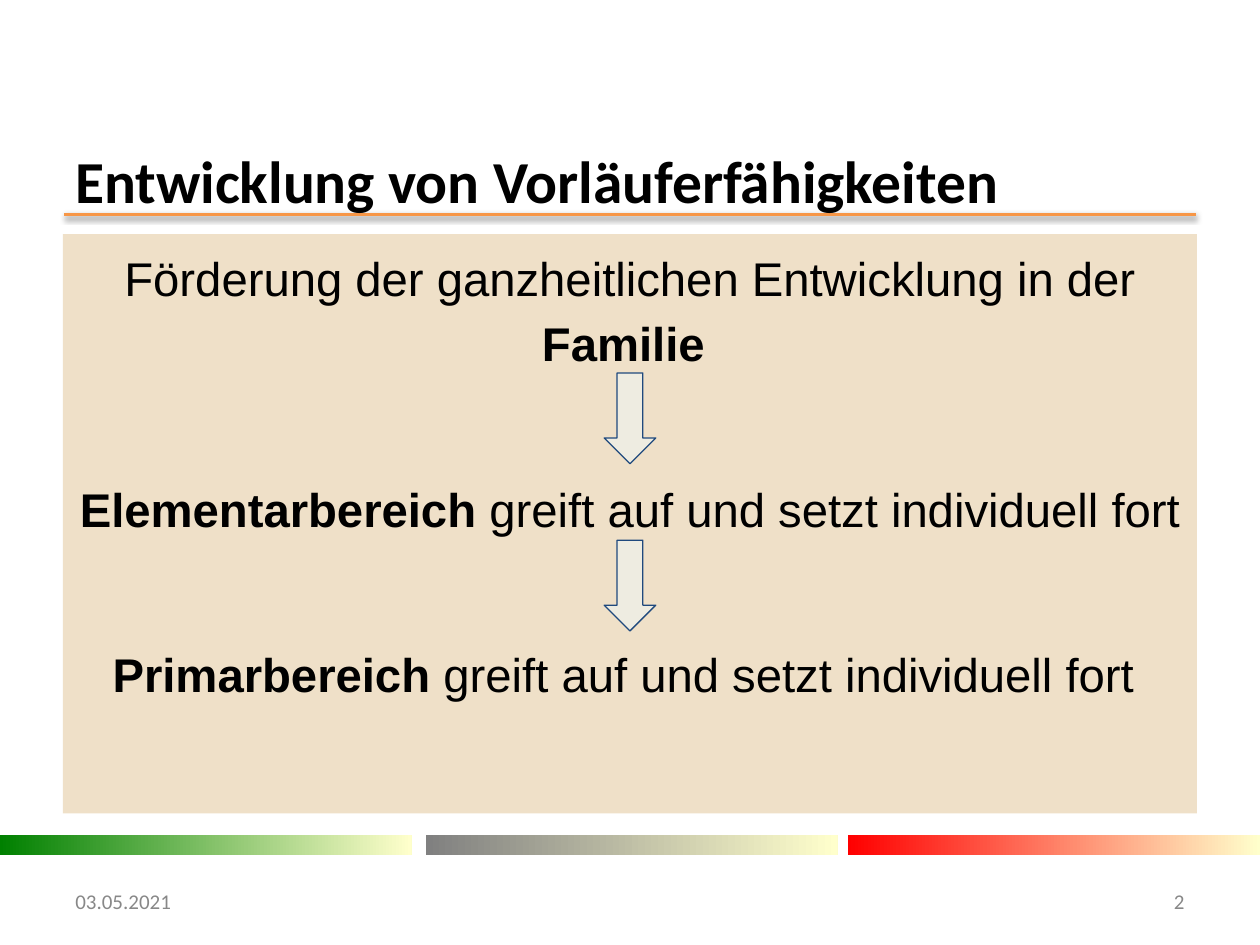
from lxml import etree
from pptx import Presentation
from pptx.dml.color import RGBColor
from pptx.enum import shapes, text
from pptx.oxml import parse_xml
from pptx.oxml.ns import nsdecls, qn
from pptx.util import Cm, Pt

BLACK = RGBColor(0x00, 0x00, 0x00)
GREY_TEXT = RGBColor(0x88, 0x88, 0x88)
ORANGE = RGBColor(0xF7, 0x96, 0x46)
SAND = RGBColor(0xEF, 0xE0, 0xC8)
IVORY = RGBColor(0xEE, 0xEC, 0xE1)
NAVY = RGBColor(0x1F, 0x49, 0x7D)
GREEN = RGBColor(0x00, 0x80, 0x00)
GREY = RGBColor(0x80, 0x80, 0x80)
RED = RGBColor(0xFF, 0x00, 0x00)
CREAM = RGBColor(0xFF, 0xFF, 0xCC)

STAGES = [
    [("Förderung der ganzheitlichen Entwicklung in der ", False), ("Familie ", True)],
    [("Elementarbereich", True), (" greift auf und setzt individuell fort", False)],
    [("Primarbereich", True), (" greift auf und setzt individuell fort ", False)],
]


def set_font(font, name, size, color):
    """Give a font its name, size and colour."""
    font.name, font.size = name, Pt(size)
    font.color.rgb = color


def add_shape(slide, kind, x, y, w, h):
    """Add a preset shape without shadow or outline."""
    sp = slide.shapes.add_shape(kind, Cm(x), Cm(y), Cm(w), Cm(h))
    sp.shadow.inherit = False
    sp.line.fill.background()
    return sp


def add_label(slide, x, y, w, h, label, size, color, bold=False, align=text.PP_ALIGN.LEFT):
    """Add one line of Calibri text, centred vertically in its box."""
    tf = slide.shapes.add_textbox(Cm(x), Cm(y), Cm(w), Cm(h)).text_frame
    tf.word_wrap = True
    tf.vertical_anchor = text.MSO_ANCHOR.MIDDLE
    p = tf.paragraphs[0]
    p.text, p.alignment = label, align
    set_font(p.font, "Calibri", size, color)
    p.font.bold = bold


def add_heading(slide, x, y, w, h):
    """Add the title with its shadowed rule below."""
    rule_y = Cm(y + h + 0.21)
    rule = slide.shapes.add_connector(
        shapes.MSO_CONNECTOR.STRAIGHT, Cm(x + 0.03), rule_y, Cm(x + w - 0.03), rule_y)
    rule.line.color.rgb, rule.line.width = ORANGE, Pt(2)
    effects = etree.SubElement(rule._element.spPr, qn("a:effectLst"))
    effects.append(parse_xml(
        f'<a:outerShdw {nsdecls("a")} blurRad="{Pt(3.1)}" dist="{Pt(1.6)}" dir="5400000" '
        'rotWithShape="0"><a:srgbClr val="000000"><a:alpha val="38000"/></a:srgbClr>'
        '</a:outerShdw>'))
    add_label(slide, x, y, w, h, "Entwicklung von Vorläuferfähigkeiten", 34, BLACK, True)


def add_stages(slide, x, y, w, h):
    """Add the panel of stages and the arrows that link them."""
    panel = add_shape(slide, shapes.MSO_SHAPE.RECTANGLE, x, y, w, h)
    panel.fill.solid()
    panel.fill.fore_color.rgb = SAND
    tf = panel.text_frame
    tf.word_wrap = True
    tf.vertical_anchor = text.MSO_ANCHOR.TOP
    for i, stage in enumerate(STAGES):
        p = tf.add_paragraph() if i else tf.paragraphs[0]
        p.alignment, p.line_spacing = text.PP_ALIGN.CENTER, 1.15
        if i:
            p.space_before = Pt(57.5)
        set_font(p.font, "Arial", 27, BLACK)
        for words, bold in stage:
            r = p.add_run()
            r.text, r.font.bold = words, bold
    arrow_w, arrow_h, pitch = 1.04, 1.83, 3.37
    for i in range(len(STAGES) - 1):
        arrow = add_shape(slide, shapes.MSO_SHAPE.DOWN_ARROW,
                          x + (w - arrow_w) / 2, y + 2.8 + i * pitch, arrow_w, arrow_h)
        arrow.fill.solid()
        arrow.fill.fore_color.rgb = IVORY
        arrow.line.color.rgb, arrow.line.width = NAVY, Pt(0.75)


def add_stripes(slide, x, y, w, h):
    """Add the three stripes that fade to cream."""
    bar_w = 8.3
    for left, color in ((x, GREEN), (x + 8.59, GREY), (x + w - bar_w, RED)):
        bar = add_shape(slide, shapes.MSO_SHAPE.RECTANGLE, left, y, bar_w, h)
        bar.fill.gradient()
        bar.fill.gradient_angle = 0
        for stop, stop_color in zip(bar.fill.gradient_stops, (color, CREAM)):
            stop.color.rgb = stop_color


def add_footer(slide, x, y, w, h):
    """Add the date at the left and the slide number at the right."""
    label_w = 5.92
    add_label(slide, x, y, label_w, h, "03.05.2021", 12, GREY_TEXT)
    add_label(slide, x + w - label_w, y, label_w, h, "2", 12, GREY_TEXT,
              align=text.PP_ALIGN.RIGHT)


def main():
    """Build the slide and save it."""
    prs = Presentation()
    prs.slide_width, prs.slide_height = Cm(25.4), Cm(19.05)
    slide = prs.slides.add_slide(prs.slide_layouts[6])
    add_stripes(slide, 0, 16.84, 25.4, 0.4)
    add_heading(slide, 1.27, 3.12, 22.86, 0.99)
    add_stages(slide, 1.27, 4.72, 22.86, 11.68)
    add_footer(slide, 1.27, 17.65, 22.86, 1.02)
    prs.save("out.pptx")


if __name__ == "__main__":
    main()
